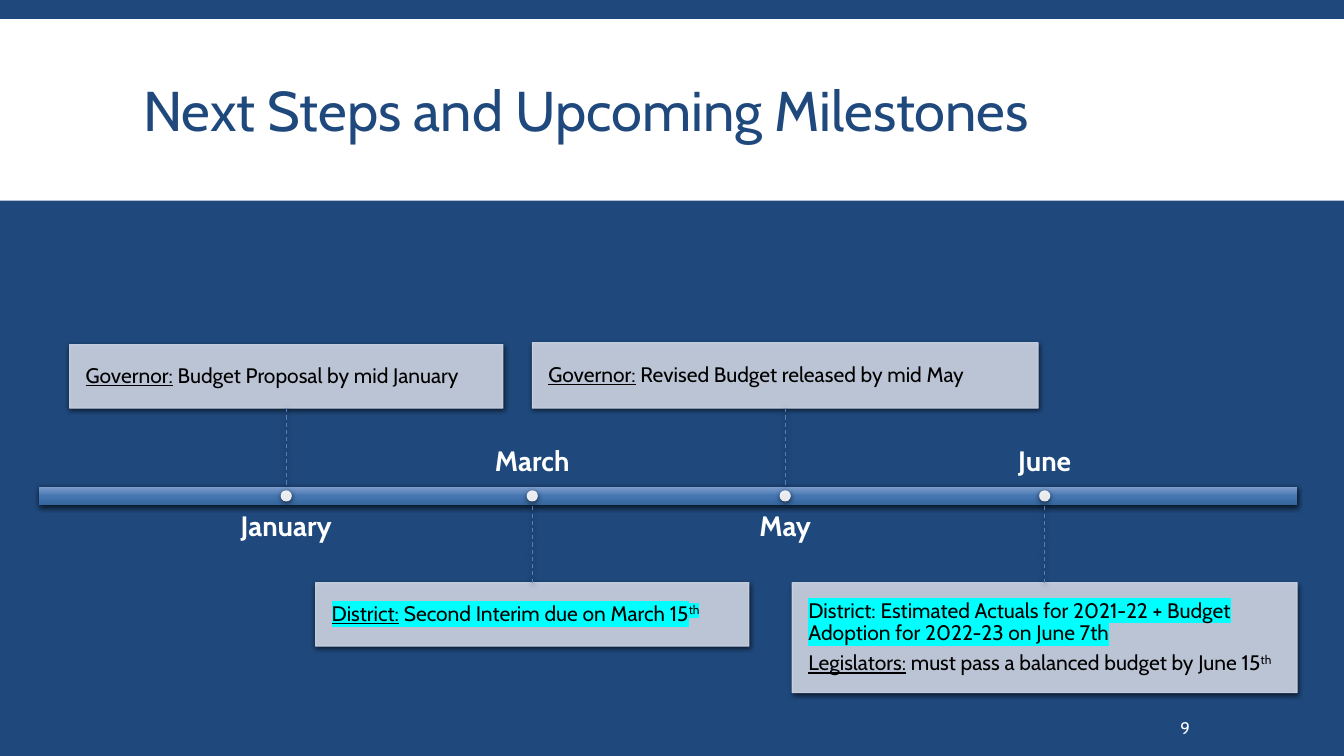
from copy import deepcopy
from lxml import etree
from pptx import Presentation
from pptx import util as u
from pptx.dml import color as clr
from pptx.enum import dml, shapes, text
from pptx.oxml import ns

NAVY, WHITE, PALE, BLUE, CYAN = "1F497D", "FFFFFF", "CFD7E7", "4F81BD", "00FFFF"


def rgb(code):
    return clr.RGBColor.from_string(code)


def sub(node, tag, **attrs):
    return etree.SubElement(node, ns.qn(tag), **attrs)


class Deck:
    """Style and current slide, with one method per kind of element."""

    font = "Cabin"

    def __init__(self):
        self.prs = Presentation()
        self.prs.slide_width, self.prs.slide_height = u.Pt(960), u.Pt(540)
        self.slide = self.prs.slides.add_slide(self.prs.slide_layouts[5])
        self.items = self.slide.shapes
        back = self.slide.background.fill
        back.solid()
        back.fore_color.rgb = rgb(NAVY)

    def run(self, para, words, size, color, bold=False, under=False, mark=None, sup=False):
        run = para.add_run()
        run.text = words
        font = run.font
        font.name, font.size, font.bold, font.underline = self.font, u.Pt(size), bold, under
        font.color.rgb = rgb(color)
        props = run._r.get_or_add_rPr()
        if sup:
            props.set("baseline", "30000")
        if mark:
            light = etree.Element(ns.qn("a:highlight"))
            sub(light, "a:srgbClr", val=mark)
            props.find(ns.qn("a:latin")).addprevious(light)

    def frame(self, shape, inset, anchor):
        frame = shape.text_frame
        frame.word_wrap = True
        frame.auto_size = text.MSO_AUTO_SIZE.NONE
        frame.vertical_anchor = anchor
        frame.margin_left, frame.margin_top, frame.margin_right, frame.margin_bottom = map(u.Pt, inset)
        return frame

    def shade(self, shape):
        glow = sub(shape._element.spPr, "a:effectLst")
        cast = sub(glow, "a:outerShdw", blurRad=str(u.Pt(4)), dist=str(u.Pt(1.2)),
                   dir="5400000", algn="ctr", rotWithShape="0")
        tone = sub(cast, "a:srgbClr", val="000000")
        sub(tone, "a:alpha", val="68000")

    def form(self, kind, area, fill, line=None, alpha=None):
        shape = self.items.add_shape(kind, *map(u.Pt, area))
        shape.fill.solid()
        shape.fill.fore_color.rgb = rgb(fill)
        if line:
            shape.line.color.rgb = rgb(line)
            shape.line.width = u.Pt(0.75)
        else:
            shape.line.fill.background()
        if alpha:
            for tone in shape._element.spPr.iter(ns.qn("a:srgbClr")):
                sub(tone, "a:alpha", val=str(alpha * 1000))
        return shape

    def title(self, words, area, band):
        strip = self.form(shapes.MSO_SHAPE.RECTANGLE, band, WHITE)
        strip.shadow.inherit = False
        head = self.items.title
        head.element.addprevious(strip.element)
        head.left, head.top, head.width, head.height = map(u.Pt, area)
        para = self.frame(head, (7.2, 3.6, 7.2, 3.6), text.MSO_ANCHOR.MIDDLE).paragraphs[0]
        para.alignment, para.line_spacing = text.PP_ALIGN.LEFT, 0.85
        self.run(para, words, 40, NAVY)

    def bar(self, area, tones):
        bar = self.form(shapes.MSO_SHAPE.RECTANGLE, area, BLUE)
        bar.fill.gradient()
        bar.fill.gradient_angle = 270
        stops = bar._element.spPr.find(".//" + ns.qn("a:gsLst"))
        stops.append(deepcopy(stops[0]))
        for i, (stop, tone) in enumerate(zip(bar.fill.gradient_stops, tones)):
            stop.position = i / 2
            stop.color.rgb = rgb(tone)
        self.shade(bar)

    def card(self, area, paras):
        card = self.form(shapes.MSO_SHAPE.RECTANGLE, area, PALE, PALE, 90)
        self.shade(card)
        frame = self.frame(card, (11.5,) * 4, text.MSO_ANCHOR.MIDDLE)
        for i, (lead, rest, sup, mark) in enumerate(paras):
            para = frame.add_paragraph() if i else frame.paragraphs[0]
            para.alignment, para.line_spacing = text.PP_ALIGN.LEFT, 0.9
            para.space_before = u.Pt(5.2 if i else 0)
            self.run(para, lead, 15, "000000", under=True, mark=mark)
            self.run(para, rest, 15, "000000", mark=mark)
            if sup:
                self.run(para, sup, 15, "000000", mark=mark, sup=True)
        return card

    def link(self, card, x, start, end, site):
        line = self.items.add_connector(shapes.MSO_CONNECTOR.STRAIGHT, *map(u.Pt, (x, start, x, end)))
        line.begin_connect(card, site)
        line.line.color.rgb = rgb(BLUE)
        line.line.width = u.Pt(0.75)
        line.line.dash_style = dml.MSO_LINE.DASH
        self.shade(line)

    def dot(self, x, y, size):
        area = (x - size / 2, y - size / 2, size, size)
        self.shade(self.form(shapes.MSO_SHAPE.OVAL, area, WHITE, alpha=90))

    def label(self, words, area, size, inset=(0,) * 4, anchor=text.MSO_ANCHOR.TOP,
              align=text.PP_ALIGN.CENTER, bold=True, space=0.9):
        box = self.items.add_textbox(*map(u.Pt, area))
        para = self.frame(box, inset, anchor).paragraphs[0]
        para.alignment, para.line_spacing = align, space
        self.run(para, words, size, WHITE, bold)


def main():
    deck = Deck()
    deck.title("Next Steps and Upcoming Milestones", (95, 22.3, 770.4, 118.8), (0, 13.7, 960, 129.6))

    top, thick = 347.8, 12.9
    deck.bar((28.1, top, 898.6, thick), ("7F9ECC", "4576B1", "34659D"))

    steps = [
        ("January", True, (49.7, 246.2, 309.6, 45.4),
         [("Governor:", " Budget Proposal by mid January", "", None)]),
        ("March", False, (225.4, 416.2, 309.6, 45.4),
         [("District:", " Second Interim due on March 15", "th", CYAN)]),
        ("May", True, (380.2, 244.8, 361.4, 46.8),
         [("Governor:", " Revised Budget released by mid May", "", None)]),
        ("June", False, (565.9, 416.2, 360.7, 78.5),
         [("District:", " Estimated Actuals for 2021-22 + Budget Adoption for 2022-23 on June 7th", "", CYAN),
          ("Legislators:", " must pass a balanced budget by June 15", "th", None)]),
    ]
    for month, above, area, paras in steps:
        left, y, width, height = area
        mid = left + width / 2
        card = deck.card(area, paras)
        if above:
            deck.link(card, mid, y + height, top, 2)
            deck.label(month, (mid - 140.8, 365.8, 281.6, 36.7), 20)
        else:
            deck.link(card, mid, y, top + thick, 0)
            deck.label(month, (mid - 140.8, 304.6, 281.6, 36.7), 20, anchor=text.MSO_ANCHOR.BOTTOM)
        deck.dot(mid, top + thick / 2, 8)

    deck.label("9", (839.5, 505.4, 74.2, 28.8), 12, (3.6, 3.6, 7.2, 3.6), text.MSO_ANCHOR.MIDDLE,
               text.PP_ALIGN.LEFT, False, 1)
    deck.prs.save("out.pptx")


if __name__ == "__main__":
    main()
